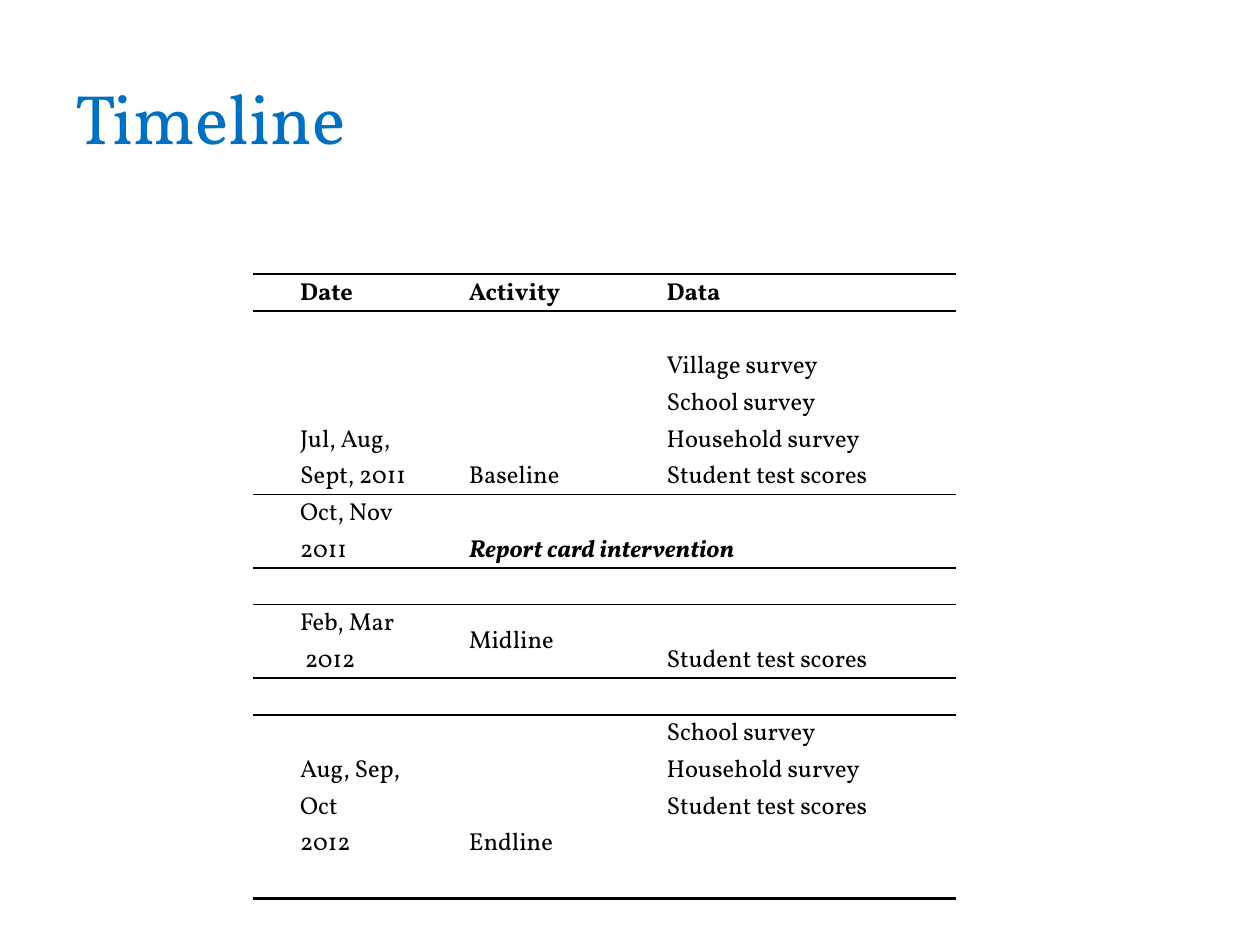
from pptx import Presentation
from pptx.dml.color import RGBColor
from pptx.enum.text import MSO_ANCHOR as Anchor, PP_ALIGN as Align
from pptx.oxml.ns import qn
from pptx.util import Cm, Pt
from lxml.etree import SubElement as Sub

BLUE = RGBColor(0x00, 0x70, 0xC0)
BLACK = RGBColor(0, 0, 0)
FACE = "Vollkorn"
LINE = 0.74


def style(font, **kind):
    color = kind.pop("color")
    for key, val in {"name": FACE, **kind}.items():
        setattr(font, key, val)
    font.color.rgb = color


def rule(cell, side, width):
    line = Sub(cell._tc.get_or_add_tcPr(), qn("a:" + side), w=str(Pt(width)))
    fill = Sub(line, qn("a:solidFill"))
    Sub(fill, qn("a:srgbClr"), val=str(BLACK))


deck = Presentation()
deck.slide_width, deck.slide_height = Cm(25.4), Cm(19.05)
slide = deck.slides.add_slide(deck.slide_layouts[6])

title = slide.shapes.add_textbox(Cm(1.27), Cm(0.76), Cm(22.86), Cm(3.18))
frame = title.text_frame
frame.word_wrap = True
frame.vertical_anchor = Anchor.MIDDLE
para = frame.paragraphs[0]
para.alignment = Align.LEFT
para.text = "Timeline"
style(para.runs[0].font, size=Pt(40), color=BLUE)

rows = [
    (1, ["Date", "Activity", "Data"]),
    (5, ["Jul, Aug, Sept, 2011", "Baseline",
         "Village survey\nSchool survey\nHousehold survey\nStudent test scores"]),
    (2, ["Oct, Nov \v2011", "Report card intervention", ""]),
    (1, ["", "", ""]),
    (2, ["Feb, Mar\v 2012", "Midline", "Student test scores"]),
    (1, ["", "", ""]),
    (5, ["Aug, Sep, Oct\v2012", "Endline",
         "School survey\nHousehold survey\vStudent test scores"]),
]
rules = {
    0: {"lnT": 1.5, "lnB": 1},
    1: {"lnT": 1, "lnB": 1},
    2: {"lnT": 1},
    4: {"lnT": 1},
    6: {"lnT": 1, "lnB": 1.5},
}
widths = [3.4, 3.99, 6.78]
high = LINE * sum(count for count, _ in rows)

shape = slide.shapes.add_table(len(rows), len(widths), Cm(5.11), Cm(5.53),
                               Cm(sum(widths)), Cm(high))
table = shape.table
table.first_row = table.horz_banding = False
table._tbl.tblPr.find(qn("a:tableStyleId")).text = "{2D5ABB26-0587-4C30-8999-92F81FD0307C}"
for col, width in zip(table.columns, widths):
    col.width = Cm(width)

for y, (count, texts) in enumerate(rows):
    table.rows[y].height = Cm(LINE * count)
    for x, text in enumerate(texts):
        cell = table.cell(y, x)
        for side, width in rules.get(y, {}).items():
            rule(cell, side, width)
        cell.fill.background()
        form = {"margin_left": Cm(0.18), "margin_right": Cm(0.18),
                "margin_top": 0, "margin_bottom": 0,
                "vertical_anchor": Anchor.BOTTOM}
        for key, val in form.items():
            setattr(cell, key, val)
        if not text:
            Sub(cell.text_frame.paragraphs[0]._p, qn("a:endParaRPr"), sz="1000")
            continue
        cell.text = text
        for para in cell.text_frame.paragraphs:
            para.line_spacing = 1.07
            para._p.get_or_add_pPr().set("marL", str(Cm(0.76)))
            for run in para.runs:
                style(run.font, size=Pt(14), color=BLACK,
                      bold=y == 0 or (y, x) == (2, 1), italic=(y, x) == (2, 1))

table.cell(2, 1).merge(table.cell(2, 2))
table.cell(4, 1).vertical_anchor = Anchor.MIDDLE
for x, count in enumerate([1, 1, 2]):
    table.cell(6, x).margin_bottom = Cm(LINE * count)

deck.save("out.pptx")
